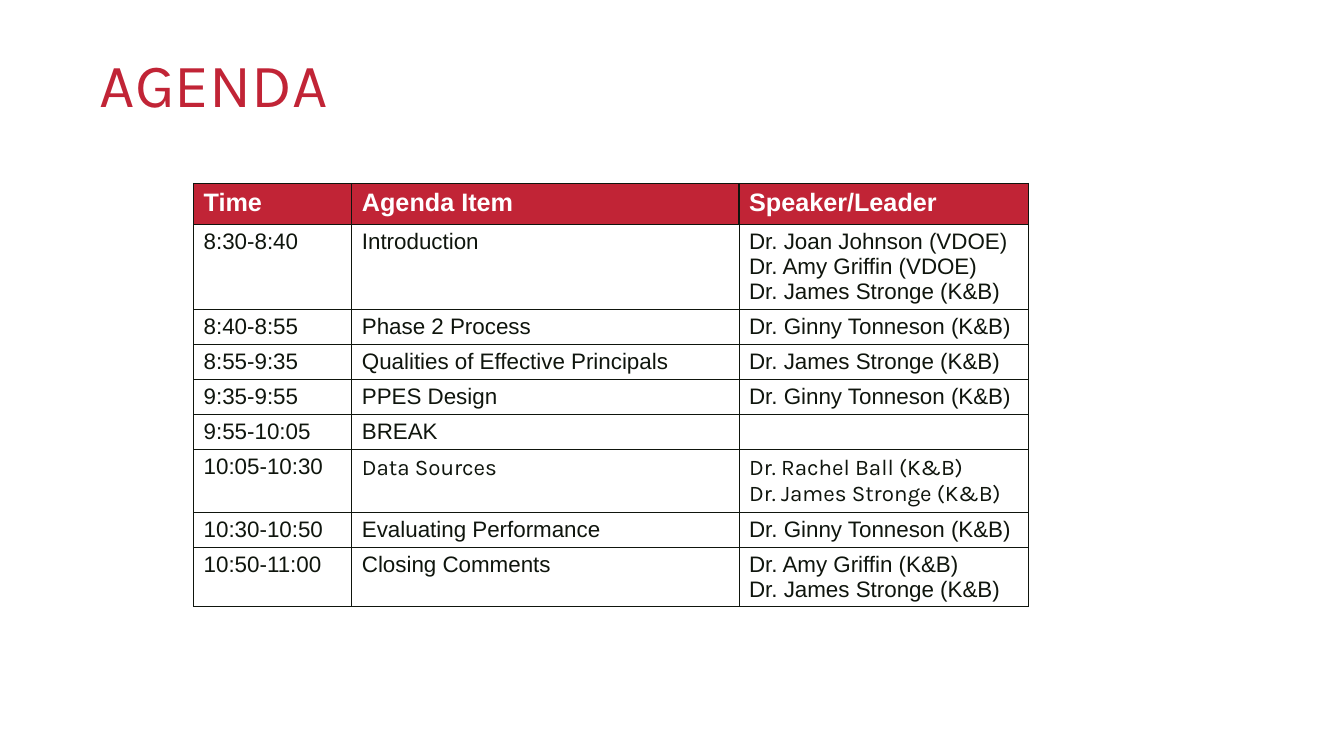
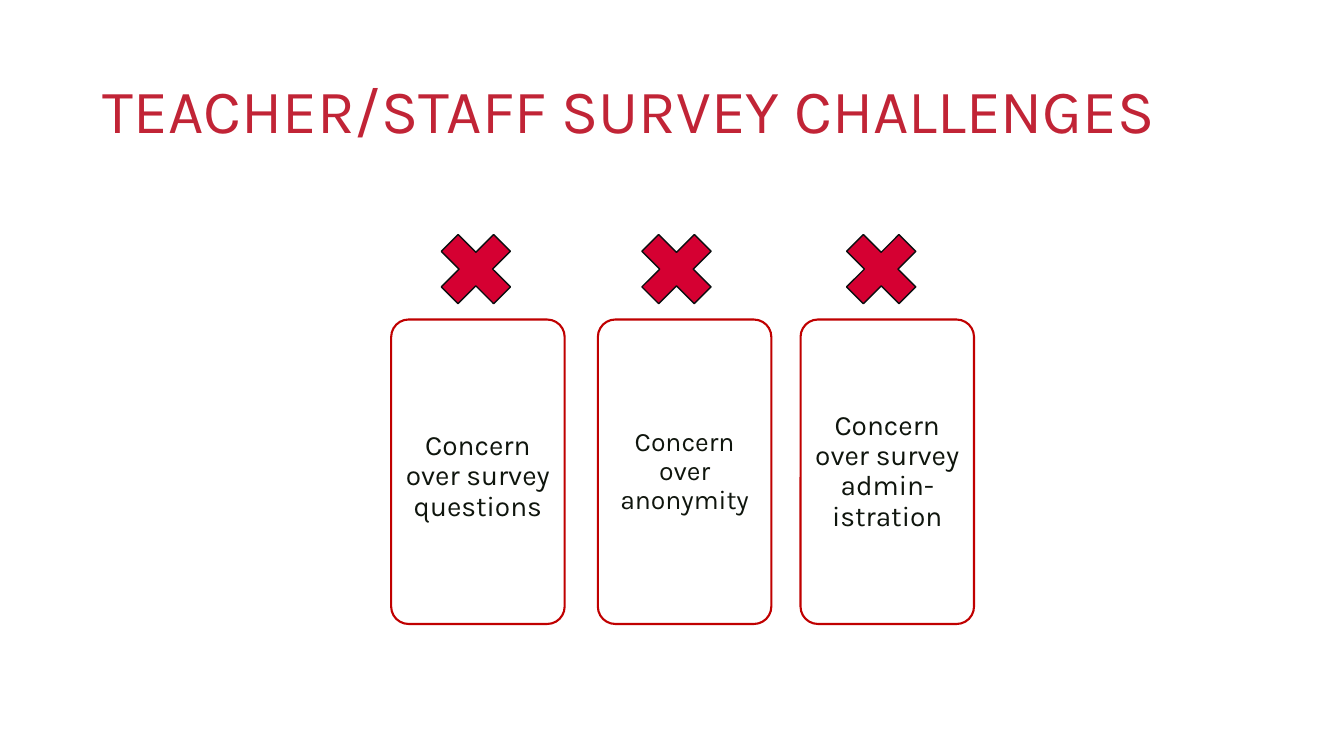
import pptx
import pptx.util
import pptx.dml.color
import pptx.enum.shapes
import pptx.enum.text
import pptx.oxml.ns
from dataclasses import dataclass
from lxml import etree

SHAPE = pptx.enum.shapes.MSO_SHAPE
ALIGN = pptx.enum.text.PP_ALIGN
MIDDLE = pptx.enum.text.MSO_ANCHOR.MIDDLE
TOP = pptx.enum.text.MSO_ANCHOR.TOP


@dataclass(frozen=True)
class Theme:
    red: str = "C12436"
    cross: str = "D50032"
    edge: str = "C00000"
    ink: str = "0F150D"
    rim: str = "0B0F10"
    white: str = "FFFFFF"
    body: str = "Arial"
    head: str = "Karla"
    title: int = 44
    label: int = 18
    cell: int = 16
    card: int = 20


T = Theme()


# Helpers
def px(n):
    return pptx.util.Emu(n * 9144)  # 100 px to the inch


def rgb(code):
    return pptx.dml.color.RGBColor.from_string(code)


def write(frame, text, size=T.cell, font=T.body, color=T.ink, bold=False,
          align=ALIGN.LEFT, lead=None, anchor=TOP, pad=(10, 5, 10, 5)):
    """Fill a text frame, one paragraph per line of text."""
    frame.word_wrap = True
    frame.auto_size = pptx.enum.text.MSO_AUTO_SIZE.NONE
    frame.vertical_anchor = anchor
    (frame.margin_left, frame.margin_top,
     frame.margin_right, frame.margin_bottom) = map(px, pad)
    for i, line in enumerate(text.split("\n")):
        para = frame.add_paragraph() if i else frame.paragraphs[0]
        para.alignment = align
        if lead:
            para.line_spacing = lead
        run = para.add_run()
        run.text = line
        run.font.size = pptx.util.Pt(size)
        run.font.name = font
        run.font.bold = bold
        run.font.color.rgb = rgb(color)


def border(cell, width):
    """Draw all four edges of a table cell."""
    props = cell._tc.get_or_add_tcPr()
    name = pptx.oxml.ns.qn
    for at, side in enumerate(("lnL", "lnR", "lnT", "lnB")):
        line = etree.Element(name(f"a:{side}"), w=str(pptx.util.Pt(width)))
        fill = etree.SubElement(line, name("a:solidFill"))
        etree.SubElement(fill, name("a:srgbClr"), val=T.ink)
        props.insert(at, line)


def shape(slide, kind, box, line, width, fill=None):
    item = slide.shapes.add_shape(kind, *map(px, box))
    item.shadow.inherit = False
    if fill:
        item.fill.solid()
        item.fill.fore_color.rgb = rgb(fill)
    else:
        item.fill.background()
    item.line.color.rgb = rgb(line)
    item.line.width = pptx.util.Pt(width)
    return item


def start(deck, text, left, top):
    """Add a slide and set its title."""
    slide = deck.slides.add_slide(deck.slide_layouts[5])
    title = slide.shapes.title
    title.left, title.top, title.width, title.height = map(
        px, (left, top, 1150, 145))
    write(title.text_frame, text, size=T.title, font=T.head, color=T.red,
          lead=0.9, anchor=MIDDLE)
    return slide


# Agenda table
COLS = (157, 384, 287)
ROWS = (
    (41, "Time", "Agenda Item", "Speaker/Leader"),
    (83, "8:30-8:40", "Introduction",
     "Dr. Joan Johnson (VDOE)\nDr. Amy Griffin (VDOE)\n"
     "Dr. James Stronge (K&B)"),
    (34, "8:40-8:55", "Phase 2 Process", "Dr. Ginny Tonneson (K&B)"),
    (34, "8:55-9:35", "Qualities of Effective Principals",
     "Dr. James Stronge (K&B)"),
    (34, "9:35-9:55", "PPES Design", "Dr. Ginny Tonneson (K&B)"),
    (34, "9:55-10:05", "BREAK", ""),
    (62, "10:05-10:30", "Data Sources",
     "Dr. Rachel Ball (K&B)\nDr. James Stronge (K&B)"),
    (34, "10:30-10:50", "Evaluating Performance",
     "Dr. Ginny Tonneson (K&B)"),
    (59, "10:50-11:00", "Closing Comments",
     "Dr. Amy Griffin (K&B)\nDr. James Stronge (K&B)"),
)
KARLA = 6  # row whose item and speakers use the title font


def fill_cell(cell, text, row, col):
    head = row == 0
    cell.fill.solid()
    cell.fill.fore_color.rgb = rgb(T.red if head else T.white)
    border(cell, 1 if head else 0.75)
    cell.margin_left = cell.margin_right = px(10)
    cell.margin_top = cell.margin_bottom = px(5)
    if not text:
        # An empty cell still needs the row's type size and font
        name = pptx.oxml.ns.qn
        end = etree.SubElement(cell.text_frame.paragraphs[0]._p,
                               name("a:endParaRPr"), sz=str(T.cell * 100))
        etree.SubElement(end, name("a:latin"), typeface=T.body)
        return
    write(cell.text_frame, text, size=T.label if head else T.cell,
          font=T.head if row == KARLA and col else T.body,
          color=T.white if head else T.ink, bold=head)


def agenda(slide, left, top):
    high = sum(row[0] for row in ROWS)
    table = slide.shapes.add_table(
        len(ROWS), len(COLS),
        *map(px, (left, top, sum(COLS), high))).table
    table.first_row = table.horz_banding = False
    for col, wide in enumerate(COLS):
        table.columns[col].width = px(wide)
    for row, (tall, *texts) in enumerate(ROWS):
        table.rows[row].height = px(tall)
        for col, text in enumerate(texts):
            fill_cell(table.cell(row, col), text, row, col)


# Survey cards: left, cross offset, text drop, type size, text
CARDS = (
    (0, 34, 10, T.card, "Concern over survey questions"),
    (205, 28, 0, T.card - 1, "Concern over anonymity"),
    (406, 30, 0, T.card, "Concern over survey admin-istration"),
)


def survey(slide, left, top):
    for x, shift, drop, size, text in CARDS:
        card = shape(slide, SHAPE.ROUNDED_RECTANGLE,
                     (left + x, top + 100, 172, 302), T.edge, 1.5)
        card.adjustments[0] = 0.1
        write(card.text_frame, text, size=size, font=T.head, lead=0.9,
              align=ALIGN.CENTER, anchor=MIDDLE, pad=(8, 8 + drop, 8, 8))
        shape(slide, SHAPE.MATH_MULTIPLY,
              (left + x + shift, top, 100, 100), T.rim, 1, T.cross)


def main():
    deck = pptx.Presentation()
    deck.slide_width, deck.slide_height = px(1333), px(750)
    agenda(start(deck, "AGENDA", 89, 14), 192, 182)
    survey(start(deck, "TEACHER/STAFF SURVEY CHALLENGES", 92, 40), 388, 217)
    deck.save("out.pptx")


if __name__ == "__main__":
    main()
